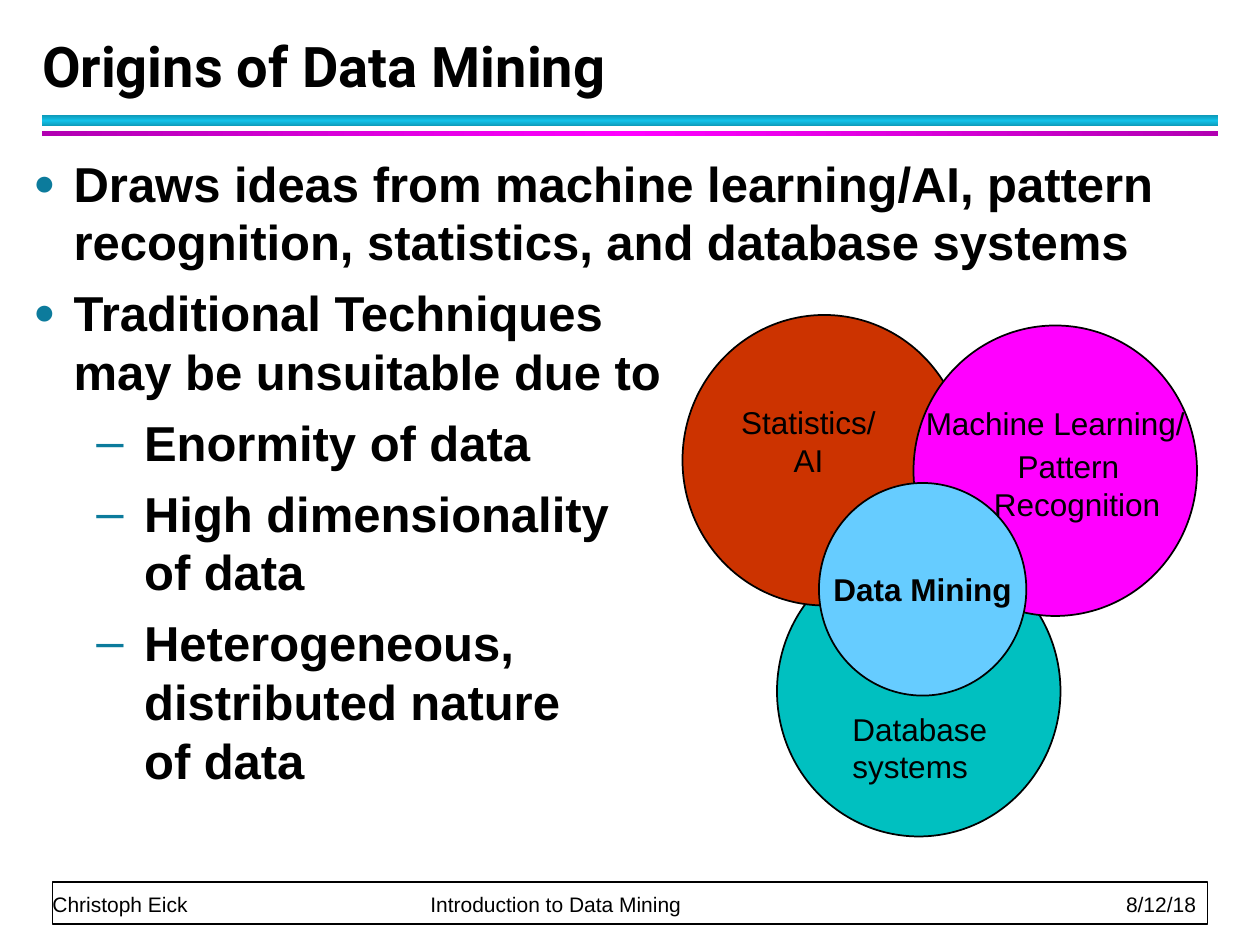
from copy import deepcopy
from dataclasses import dataclass

from lxml import etree
from pptx import Presentation
from pptx.dml.color import RGBColor
from pptx.enum.shapes import MSO_SHAPE
from pptx.enum.text import MSO_ANCHOR, PP_ALIGN
from pptx.oxml.ns import qn
from pptx.util import Pt

RECTANGLE, OVAL = MSO_SHAPE.RECTANGLE, MSO_SHAPE.OVAL
TOP, MIDDLE, BOTTOM = MSO_ANCHOR.TOP, MSO_ANCHOR.MIDDLE, MSO_ANCHOR.BOTTOM
LEFT, CENTER = PP_ALIGN.LEFT, PP_ALIGN.CENTER


@dataclass(frozen=True)
class Theme:
    body_font: str = "Arial"
    title_font: str = "Roboto"
    title_size: float = 32
    body_size: float = 28
    label_size: float = 18
    footer_size: float = 12
    ink: str = "000000"
    paper: str = "FFFFFF"
    bullet: str = "0C7B9C"
    teal_bar: tuple = ("0E9BBA", "12C2E9", "0E9BBA")
    magenta_bar: tuple = ("B200B2", "FF00FF", "B200B2")
    database: str = "00C0C0"
    statistics: str = "CC3300"
    learning: str = "FF00FF"
    mining: str = "66CCFF"


THEME = Theme()


@dataclass(frozen=True)
class Box:
    left: float
    top: float
    width: float
    height: float

    def lengths(self) -> tuple:
        return Pt(self.left), Pt(self.top), Pt(self.width), Pt(self.height)


@dataclass(frozen=True)
class Bullet:
    text: str
    level: int = 0


@dataclass(frozen=True)
class BulletStyle:
    char: str
    percent: int
    margin: float
    hanging: float


BULLET_STYLES = (BulletStyle("●", 75, 23, 23), BulletStyle("–", 100, 63.3, 27.3))
BULLETS = (
    Bullet("Draws ideas from machine learning/AI, pattern recognition, "
           "statistics, and database systems"),
    Bullet("Traditional Techniques\nmay be unsuitable due to"),
    Bullet("Enormity of data", 1),
    Bullet("High dimensionality \nof data", 1),
    Bullet("Heterogeneous, \ndistributed nature \nof data", 1),
)


def add_solid(slide, kind, box: Box, color: str):
    """Add an outlined shape filled with one colour."""
    shape = slide.shapes.add_shape(kind, *box.lengths())
    shape.shadow.inherit = False
    shape.fill.solid()
    shape.fill.fore_color.rgb = RGBColor.from_string(color)
    shape.line.color.rgb = RGBColor.from_string(THEME.ink)
    shape.line.width = Pt(1)
    return shape


def add_gradient_bar(slide, box: Box, colors: tuple, angle: float) -> None:
    bar = slide.shapes.add_shape(RECTANGLE, *box.lengths())
    bar.shadow.inherit = False
    bar.line.fill.background()
    bar.fill.gradient()
    bar.fill.gradient_angle = angle
    stop_list = bar.element.find(".//" + qn("a:gsLst"))
    stop_list.append(deepcopy(stop_list[0]))
    for stop, color, position in zip(bar.fill.gradient_stops, colors, (0, 0.5, 1)):
        stop.color.rgb = RGBColor.from_string(color)
        stop.position = position


def add_text_frame(slide, box: Box, side: float = 7.2, edge: float = 3.6, anchor=TOP):
    """Add a wrapping text box with the given side and top/bottom insets."""
    frame = slide.shapes.add_textbox(*box.lengths()).text_frame
    frame.word_wrap = True
    frame.vertical_anchor = anchor
    frame.margin_left = frame.margin_right = Pt(side)
    frame.margin_top = frame.margin_bottom = Pt(edge)
    return frame


def write(paragraph, text: str, size: float, bold: bool = False,
          align=LEFT, font: str = THEME.body_font) -> None:
    paragraph.text = text
    paragraph.alignment = align
    paragraph.font.name = font
    paragraph.font.size = Pt(size)
    paragraph.font.bold = bold
    paragraph.font.color.rgb = RGBColor.from_string(THEME.ink)


def set_bullet(paragraph, style: BulletStyle) -> None:
    properties = paragraph._p.get_or_add_pPr()
    properties.set("marL", str(Pt(style.margin)))
    properties.set("indent", str(-Pt(style.hanging)))
    color = etree.SubElement(properties, qn("a:buClr"))
    etree.SubElement(color, qn("a:srgbClr"), val=THEME.bullet)
    etree.SubElement(properties, qn("a:buSzPct"), val=str(style.percent * 1000))
    etree.SubElement(properties, qn("a:buFont"), typeface=THEME.body_font)
    etree.SubElement(properties, qn("a:buChar"), char=style.char)


def set_tabs(paragraph, *stops: tuple) -> None:
    tabs = etree.SubElement(paragraph._p.get_or_add_pPr(), qn("a:tabLst"))
    for position, align in stops:
        etree.SubElement(tabs, qn("a:tab"), pos=str(Pt(position)), algn=align)


def add_footer(slide) -> None:
    add_solid(slide, RECTANGLE, Box(30, 504, 660, 24), THEME.paper)
    footer = add_text_frame(slide, Box(30, 506, 659, 18), 0, 0, BOTTOM).paragraphs[0]
    set_tabs(footer, (216, "l"), (653.5, "r"))
    write(footer, "Christoph Eick\tIntroduction to Data Mining\t8/12/18", THEME.footer_size)
    footer.line_spacing = Pt(20)


def add_bullets(slide) -> None:
    frame = add_text_frame(slide, Box(12, 84, 696, 432))
    for index, bullet in enumerate(BULLETS):
        paragraph = frame.add_paragraph() if index else frame.paragraphs[0]
        paragraph.level = bullet.level
        set_bullet(paragraph, BULLET_STYLES[bullet.level])
        write(paragraph, bullet.text, THEME.body_size, bold=True)
        paragraph.space_before = Pt(2.8 if index else 0)
        paragraph.space_after = Pt(4)


def add_title(slide) -> None:
    title = add_text_frame(slide, Box(24, 18, 652, 42), side=0, anchor=BOTTOM).paragraphs[0]
    write(title, "Origins of Data Mining", THEME.title_size, bold=True, font=THEME.title_font)
    title.line_spacing = Pt(36)


def add_field(slide, left: float, top: float, color: str) -> None:
    """Add one of the equal circles for a contributing field."""
    add_solid(slide, OVAL, Box(left, top, 162, 166), color)


def add_venn(slide) -> None:
    add_field(slide, 444, 312, THEME.database)
    add_field(slide, 390, 180, THEME.statistics)
    add_field(slide, 522, 186, THEME.learning)

    learning = add_text_frame(slide, Box(529, 227.5, 168, 75.5), side=0)
    write(learning.paragraphs[0], "Machine Learning/", THEME.label_size)
    pattern = learning.add_paragraph()
    write(pattern, "Pattern \n Recognition", THEME.label_size, align=CENTER)
    pattern.space_before = Pt(2.7)

    statistics = add_text_frame(slide, Box(408, 227, 108, 50.5))
    write(statistics.paragraphs[0], "Statistics/\nAI", THEME.label_size, align=CENTER)

    mining = add_solid(slide, OVAL, Box(468, 276, 118.5, 121.5), THEME.mining).text_frame
    mining.word_wrap = False
    mining.vertical_anchor = MIDDLE
    write(mining.paragraphs[0], "Data Mining", THEME.label_size, bold=True, align=CENTER)

    database = add_text_frame(slide, Box(480, 402, 114, 50.5))
    write(database.paragraphs[0], "Database systems", THEME.label_size)


def main() -> None:
    deck = Presentation()
    deck.slide_width, deck.slide_height = Pt(720), Pt(540)
    slide = deck.slides.add_slide(deck.slide_layouts[6])
    add_footer(slide)
    add_gradient_bar(slide, Box(24, 66, 672, 6), THEME.teal_bar, 90)
    add_gradient_bar(slide, Box(24, 75, 672, 3), THEME.magenta_bar, 0)
    add_bullets(slide)
    add_title(slide)
    add_venn(slide)
    deck.save("out.pptx")


if __name__ == "__main__":
    main()
